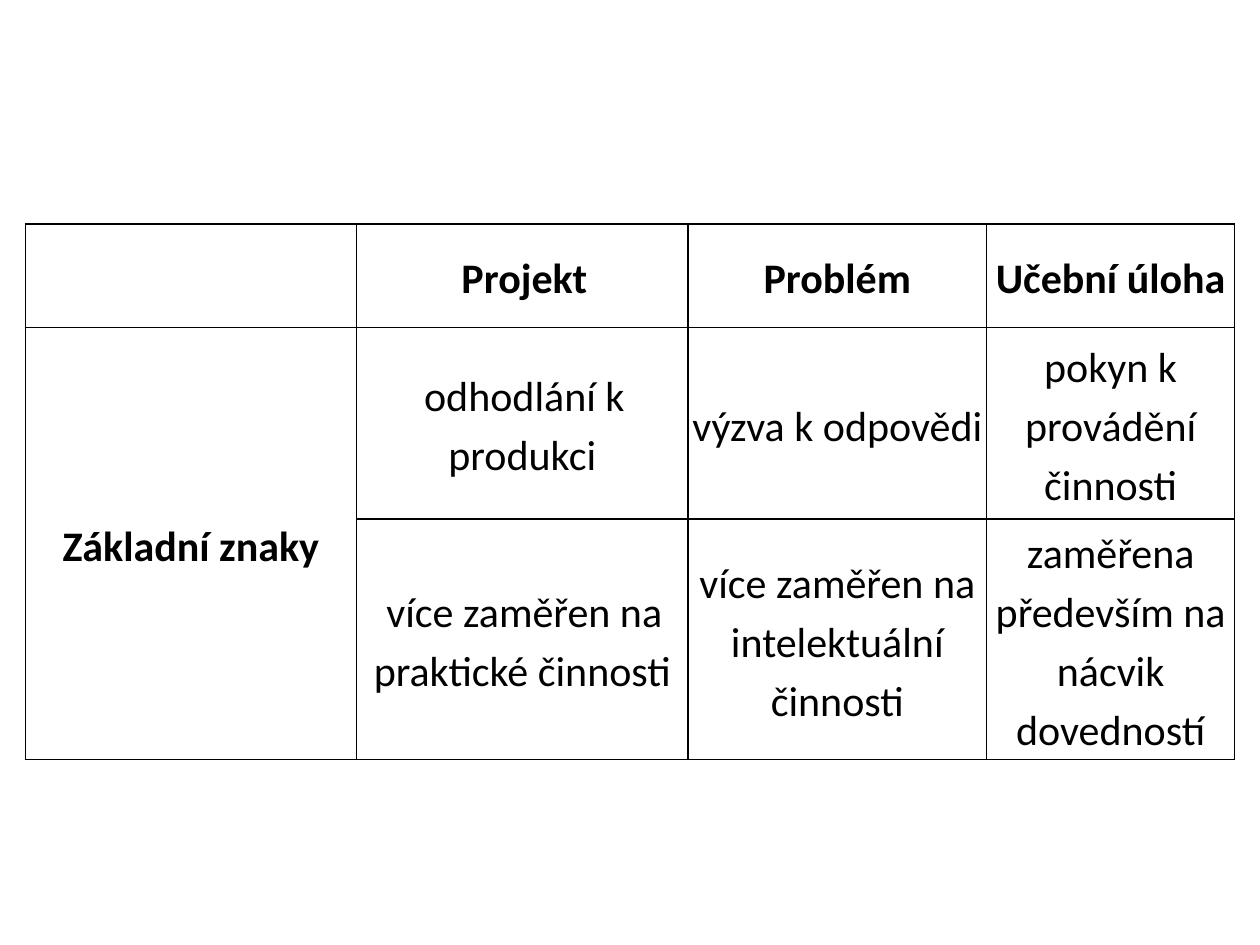
from dataclasses import dataclass

from lxml import etree
from pptx import Presentation
from pptx import util as u
from pptx.dml.color import RGBColor
from pptx.enum import text
from pptx.oxml.ns import qn


@dataclass(frozen=True)
class Theme:
    font: str = "Calibri"
    size: u.Length = u.Pt(24)
    ink: str = "000000"
    border: u.Length = u.Pt(1)
    line_spacing: float = 1.15
    margin: u.Length = u.Cm(0.05)


THEME = Theme()
COLUMN_WIDTHS = (6.68, 6.68, 6.02, 5)
ROW_HEIGHTS = (2.08, 3.86, 3.86)
TABLE_HEIGHT = 10.72
PROJECT_COLUMN = 1
PROJECT_INDENT = u.Cm(0.08)
COMPARISON = (
    ("", "Projekt", "Problém", "Učební úloha"),
    ("Základní znaky", "odhodlání k produkci", "výzva k odpovědi",
     "pokyn k provádění činnosti"),
    ("", "více zaměřen na praktické činnosti",
     "více zaměřen na intelektuální činnosti",
     "zaměřena především na nácvik dovedností"),
)


def apply_format(target, values):
    for name, value in values.items():
        setattr(target, name, value)


def add_borders(cell):
    """Rule all four sides; border elements must precede the cell fill."""
    properties = cell._tc.get_or_add_tcPr()
    for position, side in enumerate(("lnL", "lnR", "lnT", "lnB")):
        line = etree.Element(qn(f"a:{side}"), w=str(THEME.border))
        fill = etree.SubElement(line, qn("a:solidFill"))
        etree.SubElement(fill, qn("a:srgbClr"), val=THEME.ink)
        properties.insert(position, line)


def write_cell(cell, wording, bold, indent):
    paragraph = cell.text_frame.paragraphs[0]
    apply_format(paragraph, {"alignment": text.PP_ALIGN.CENTER,
                             "line_spacing": THEME.line_spacing})
    if indent:
        paragraph._p.get_or_add_pPr().set("indent", str(indent))
    run = paragraph.add_run()
    run.text = wording
    apply_format(run.font, {"name": THEME.font, "size": THEME.size, "bold": bold})
    run.font.color.rgb = RGBColor.from_string(THEME.ink)


def style_cell(cell):
    apply_format(cell, {"vertical_anchor": text.MSO_ANCHOR.MIDDLE,
                        "margin_left": THEME.margin, "margin_right": THEME.margin,
                        "margin_top": THEME.margin, "margin_bottom": THEME.margin})
    cell.fill.background()
    add_borders(cell)


def add_comparison_table(slide):
    frame = slide.shapes.add_table(
        len(ROW_HEIGHTS), len(COLUMN_WIDTHS), u.Cm(0.51), u.Cm(4.52),
        u.Cm(sum(COLUMN_WIDTHS)), u.Cm(TABLE_HEIGHT))
    table = frame.table
    apply_format(table, {"first_row": False, "horz_banding": False})
    for column, width in zip(table.columns, COLUMN_WIDTHS):
        column.width = u.Cm(width)
    for row, height in zip(table.rows, ROW_HEIGHTS):
        row.height = u.Cm(height)
    frame.height = u.Cm(TABLE_HEIGHT)

    for r, wordings in enumerate(COMPARISON):
        for c, wording in enumerate(wordings):
            cell = table.cell(r, c)
            style_cell(cell)
            if wording:
                indent = PROJECT_INDENT if c == PROJECT_COLUMN else 0
                write_cell(cell, wording, r == 0 or c == 0, indent)
    table.cell(1, 0).merge(table.cell(2, 0))


def main():
    presentation = Presentation()
    apply_format(presentation, {"slide_width": u.Cm(25.4), "slide_height": u.Cm(19.05)})
    slide = presentation.slides.add_slide(presentation.slide_layouts[6])
    add_comparison_table(slide)
    presentation.save("out.pptx")


if __name__ == "__main__":
    main()
